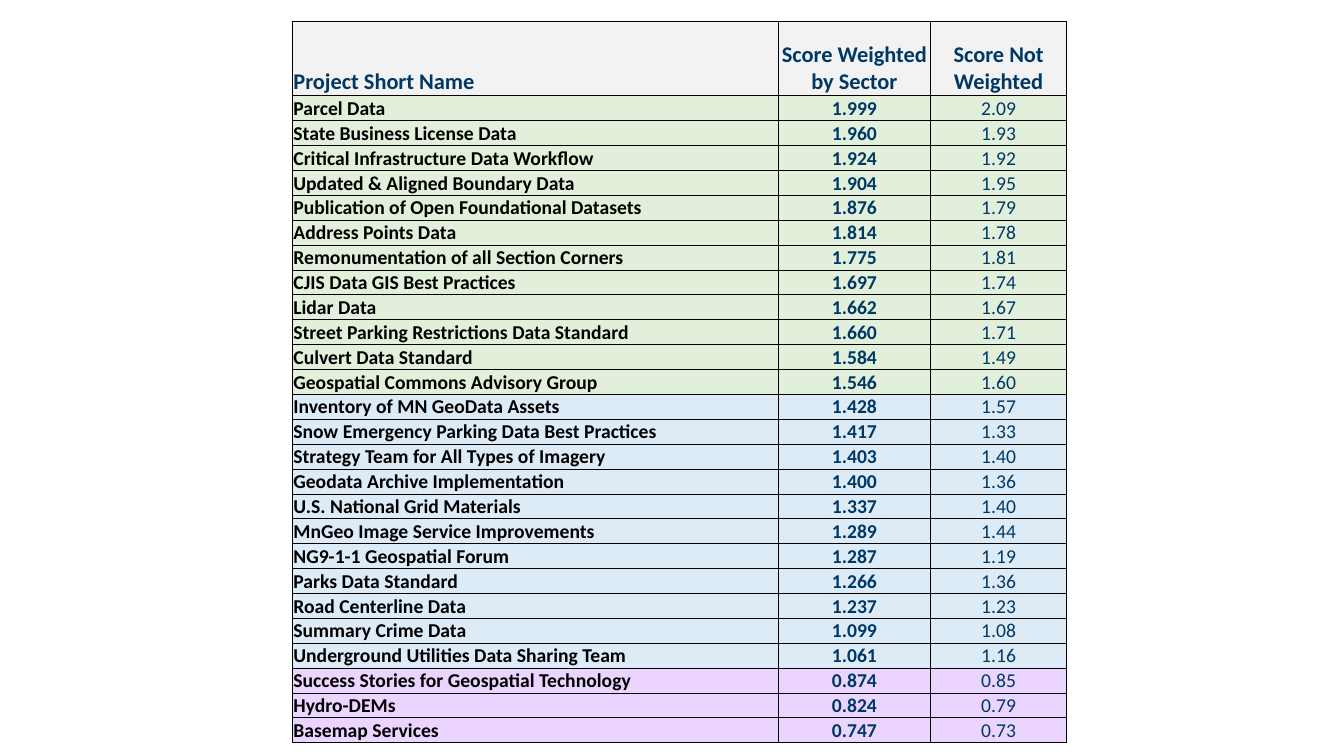
import pptx
import pptx.dml.color
import pptx.enum.text
import pptx.oxml
import pptx.oxml.ns
import pptx.util
from pptx.util import Inches

COLORS = {
    "header": "F2F2F2",
    "high": "E2EFDA",
    "medium": "DDEBF7",
    "low": "EBD5FF",
    "navy": "003865",
    "black": "000000",
}
FONT = "Calibri"
COLUMN_WIDTHS = [4.82, 1.51, 1.35]
TABLE_HEIGHT = 7.16
HEADER_HEIGHT = 0.74
HEADERS = ["Project Short Name", "Score Weighted by Sector", "Score Not Weighted"]
PROJECTS = {
    "high": [
        ("Parcel Data", "1.999", "2.09"),
        ("State Business License Data", "1.960", "1.93"),
        ("Critical Infrastructure Data Workflow", "1.924", "1.92"),
        ("Updated & Aligned Boundary Data", "1.904", "1.95"),
        ("Publication of Open Foundational Datasets", "1.876", "1.79"),
        ("Address Points Data", "1.814", "1.78"),
        ("Remonumentation of all Section Corners", "1.775", "1.81"),
        ("CJIS Data GIS Best Practices", "1.697", "1.74"),
        ("Lidar Data", "1.662", "1.67"),
        ("Street Parking Restrictions Data Standard", "1.660", "1.71"),
        ("Culvert Data Standard", "1.584", "1.49"),
        ("Geospatial Commons Advisory Group", "1.546", "1.60"),
    ],
    "medium": [
        ("Inventory of MN GeoData Assets", "1.428", "1.57"),
        ("Snow Emergency Parking Data Best Practices", "1.417", "1.33"),
        ("Strategy Team for All Types of Imagery", "1.403", "1.40"),
        ("Geodata Archive Implementation", "1.400", "1.36"),
        ("U.S. National Grid Materials", "1.337", "1.40"),
        ("MnGeo Image Service Improvements", "1.289", "1.44"),
        ("NG9-1-1 Geospatial Forum", "1.287", "1.19"),
        ("Parks Data Standard", "1.266", "1.36"),
        ("Road Centerline Data", "1.237", "1.23"),
        ("Summary Crime Data", "1.099", "1.08"),
        ("Underground Utilities Data Sharing Team", "1.061", "1.16"),
    ],
    "low": [
        ("Success Stories for Geospatial Technology", "0.874", "0.85"),
        ("Hydro-DEMs", "0.824", "0.79"),
        ("Basemap Services", "0.747", "0.73"),
    ],
}


def rgb(name):
    return pptx.dml.color.RGBColor.from_string(COLORS[name])


def add_borders(cell):
    properties = cell._tc.get_or_add_tcPr()
    for side in ("lnL", "lnR", "lnT", "lnB"):
        properties.append(pptx.oxml.parse_xml(
            f'<a:{side} {pptx.oxml.ns.nsdecls("a")} w="{pptx.util.Pt(0.5)}">'
            f'<a:solidFill><a:srgbClr val="{COLORS["black"]}"/></a:solidFill></a:{side}>'
        ))


def fill_cell(cell, text, fill, size, color, bold, centered):
    add_borders(cell)
    cell.fill.solid()
    cell.fill.fore_color.rgb = rgb(fill)
    cell.margin_left = cell.margin_top = cell.margin_right = Inches(0.01)
    cell.margin_bottom = 0
    cell.vertical_anchor = pptx.enum.text.MSO_ANCHOR.BOTTOM
    cell.text = text
    paragraph = cell.text_frame.paragraphs[0]
    alignment = pptx.enum.text.PP_ALIGN
    paragraph.alignment = alignment.CENTER if centered else alignment.LEFT
    paragraph.font.name = FONT
    paragraph.font.size = pptx.util.Pt(size)
    paragraph.font.bold = bold
    paragraph.font.color.rgb = rgb(color)


def add_score_table(slide):
    rows = [(tier, project) for tier, projects in PROJECTS.items() for project in projects]
    table = slide.shapes.add_table(
        len(rows) + 1, len(HEADERS), Inches(2.9), Inches(0.21),
        Inches(sum(COLUMN_WIDTHS)), Inches(TABLE_HEIGHT),
    ).table
    table.horz_banding = False
    for column, width in zip(table.columns, COLUMN_WIDTHS):
        column.width = Inches(width)
    for row in table.rows:
        row.height = Inches((TABLE_HEIGHT - HEADER_HEIGHT) / len(rows))
    table.rows[0].height = Inches(HEADER_HEIGHT)

    for column, text in enumerate(HEADERS):
        fill_cell(table.cell(0, column), text, "header", 16, "navy", True, column > 0)
    for row, (tier, project) in enumerate(rows, start=1):
        for column, text in enumerate(project):
            color = "navy" if column else "black"
            fill_cell(table.cell(row, column), text, tier, 14, color, column < 2, column > 0)


def main():
    presentation = pptx.Presentation()
    presentation.slide_width = Inches(13.33)
    presentation.slide_height = Inches(7.5)
    slide = presentation.slides.add_slide(presentation.slide_layouts[6])
    add_score_table(slide)
    presentation.save("out.pptx")


if __name__ == "__main__":
    main()
